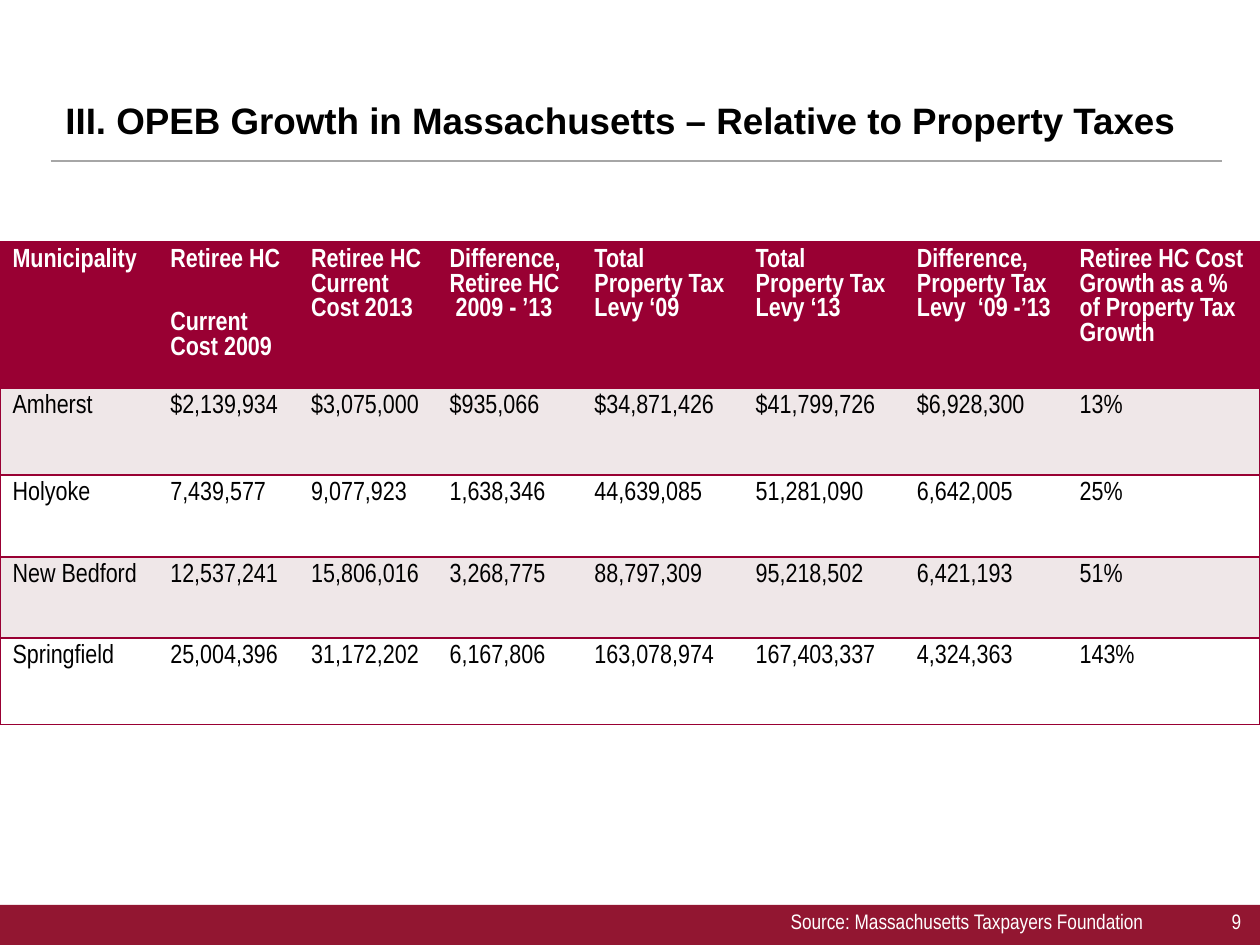
import pptx
import pptx.util
import pptx.dml.color
import pptx.enum.shapes
import pptx.enum.text
import pptx.oxml
import pptx.oxml.ns
from pptx.util import Cm

COLORS = {
    "bar": "921631", "rule": "A6A6A6", "maroon": "990033",
    "band": "EFE7E8", "white": "FFFFFF", "black": "000000",
}
TITLE = {"size": 21, "name": "Arial", "bold": True, "color": "black"}
HEADER = {"size": 15, "name": "Arial Narrow", "bold": True, "color": "white"}
BODY = {"size": 15, "name": "Arial Narrow", "bold": False, "color": "black"}
FOOTER = {"size": 12, "name": "Arial Narrow", "bold": False, "color": "white"}

COLUMNS = [3.18, 2.84, 2.79, 2.92, 3.25, 3.25, 3.28, 3.89]
ROW_HEIGHTS = [2.95, 1.75, 1.65, 1.63, 1.75]
ROWS = [
    ["Municipality", "Retiree HC \vCurrent Cost 2009",
     "Retiree HC Current\vCost 2013", "Difference,\nRetiree HC\v 2009 - ’13",
     "Total Property Tax Levy ‘09", "Total Property Tax Levy ‘13",
     "Difference,\nProperty Tax\nLevy  ‘09 -’13",
     "Retiree HC Cost Growth as a % of Property Tax Growth"],
    ["Amherst", "$2,139,934", "$3,075,000", "$935,066", "$34,871,426",
     "$41,799,726", "$6,928,300", "13%"],
    ["Holyoke", "7,439,577", "9,077,923", "1,638,346", "44,639,085",
     "51,281,090", "6,642,005", "25%"],
    ["New Bedford", "12,537,241", "15,806,016", "3,268,775", "88,797,309",
     "95,218,502", "6,421,193", "51%"],
    ["Springfield", "25,004,396", "31,172,202", "6,167,806", "163,078,974",
     "167,403,337", "4,324,363", "143%"],
]
NO_STYLE = "{2D5ABB26-0587-4C30-8999-92F81FD0307C}"


def rgb(name):
    return pptx.dml.color.RGBColor.from_string(COLORS[name])


def write(tf, text, fmt):
    tf.text = text
    values = {"size": pptx.util.Pt(fmt["size"]), "name": fmt["name"],
              "bold": fmt["bold"]}
    for p in tf.paragraphs:
        for r in p.runs:
            for key, value in values.items():
                setattr(r.font, key, value)
            r.font.color.rgb = rgb(fmt["color"])


def add_text(s, box, text, fmt, **frame):
    tf = s.shapes.add_textbox(*map(Cm, box)).text_frame
    for key, value in {"word_wrap": True, **frame}.items():
        setattr(tf, key, value)
    write(tf, text, fmt)
    return tf.paragraphs[0]


def add_heading(s, left, top, width, height):
    p = add_text(s, (left + 0.05, top, width, height),
                 "III. OPEB Growth in Massachusetts – Relative to Property Taxes",
                 TITLE, vertical_anchor=pptx.enum.text.MSO_ANCHOR.BOTTOM)
    p.line_spacing = 0.9
    y = Cm(top + height + 0.25)
    line = s.shapes.add_connector(pptx.enum.shapes.MSO_CONNECTOR.STRAIGHT,
                                  Cm(left), y, Cm(left + 23.62), y)
    line.line.color.rgb = rgb("rule")
    line.line.width = pptx.util.Pt(1.25)
    line._element.spPr.append(pptx.oxml.parse_xml(
        "<a:effectLst %s/>" % pptx.oxml.ns.nsdecls("a")))


def add_borders(cell, sides):
    tcPr = cell._tc.get_or_add_tcPr()
    for i, side in enumerate(sides):
        tcPr.insert(i, pptx.oxml.parse_xml(
            '<a:ln%s %s w="12700"><a:solidFill><a:srgbClr val="%s"/>'
            "</a:solidFill></a:ln%s>"
            % (side, pptx.oxml.ns.nsdecls("a"), COLORS["maroon"], side)))


def add_levy_table(s, left, top, width, height):
    table = s.shapes.add_table(len(ROWS), len(COLUMNS), Cm(left), Cm(top),
                               Cm(width), Cm(height)).table
    table._tbl.tblPr.find(pptx.oxml.ns.qn("a:tableStyleId")).text = NO_STYLE
    table.horz_banding = False
    for column, w in zip(table.columns, COLUMNS):
        column.width = Cm(w)
    for row, h in zip(table.rows, ROW_HEIGHTS):
        row.height = Cm(h)
    last = len(COLUMNS) - 1
    for i, row in enumerate(ROWS):
        fill = "maroon" if i == 0 else "band" if i % 2 else "white"
        for j, text in enumerate(row):
            cell = table.cell(i, j)
            cell.fill.solid()
            cell.fill.fore_color.rgb = rgb(fill)
            write(cell.text_frame, text, BODY if i else HEADER)
            add_borders(cell, "L" * (j == 0) + "R" * (j == last) + "TB")


def add_footer(s, left, top, width, height):
    bar = s.shapes.add_shape(pptx.enum.shapes.MSO_SHAPE.RECTANGLE,
                             Cm(left), Cm(top), Cm(width), Cm(height))
    bar.shadow.inherit = False
    bar.fill.solid()
    bar.fill.fore_color.rgb = rgb("bar")
    bar.line.fill.background()
    p = add_text(s, (left, top - 0.03, width - 0.13, height + 0.03),
                 "Source: Massachusetts Taxpayers Foundation\t\t9", FOOTER,
                 vertical_anchor=pptx.enum.text.MSO_ANCHOR.MIDDLE,
                 margin_top=0, margin_bottom=Cm(0.13))
    p.alignment = pptx.enum.text.PP_ALIGN.RIGHT


def main():
    prs = pptx.Presentation()
    prs.slide_width, prs.slide_height = Cm(25.4), Cm(19.05)
    s = prs.slides.add_slide(prs.slide_layouts[6])
    add_heading(s, 1.02, 0.43, 29.85, 2.57)
    add_levy_table(s, 0, 4.88, sum(COLUMNS), sum(ROW_HEIGHTS))
    add_footer(s, 0, 18.24, 25.4, 0.81)
    prs.save("out.pptx")


if __name__ == "__main__":
    main()
